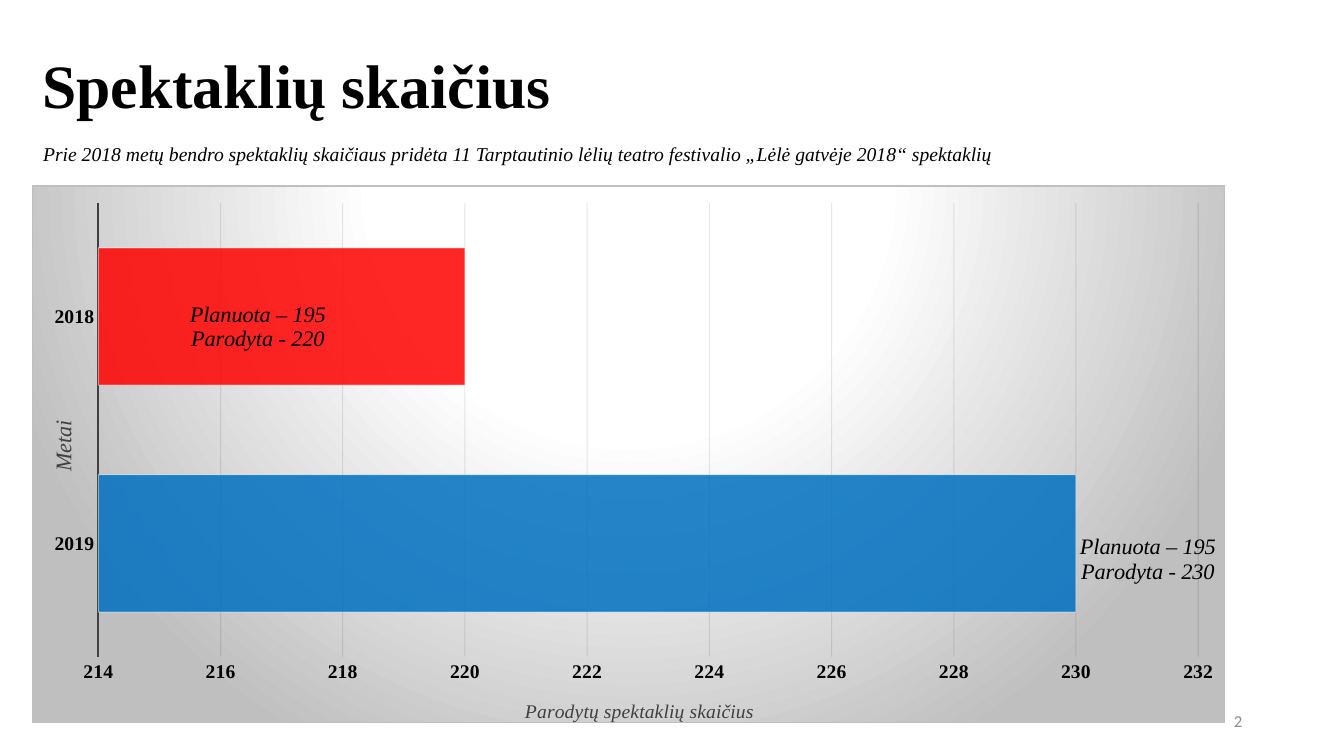
import pptx
import pptx.util
import pptx.chart.data
import pptx.dml.color
import pptx.enum.chart
import pptx.enum.text
import pptx.oxml
import pptx.oxml.ns

Inches = pptx.util.Inches
Pt = pptx.util.Pt
RGBColor = pptx.dml.color.RGBColor
Align = pptx.enum.text.PP_ALIGN
Label = pptx.enum.chart.XL_LABEL_POSITION
Tick = pptx.enum.chart.XL_TICK_MARK
qn = pptx.oxml.ns.qn

BLACK = RGBColor(0, 0, 0)
WHITE = RGBColor(255, 255, 255)
DARK = RGBColor(0x40, 0x40, 0x40)
GRID = RGBColor(0x0D, 0x0D, 0x0D)
GRAY = RGBColor(0x8C, 0x8C, 0x8C)
BLUE = RGBColor(0, 0x70, 0xC0)
RED = RGBColor(255, 0, 0)
SERIF = "Times New Roman"


def style(font, size, color, name=SERIF, bold=False, italic=False):
    font.size = Pt(size)
    font.color.rgb = color
    font.name = name
    font.bold = bold
    font.italic = italic


def place(node, spot, modes, **dims):
    for old in node.findall(qn("c:layout")):
        node.remove(old)
    parts = [f'<c:{tag} val="{val}"/>' for tag, val in [*modes, *dims.items()]]
    node.insert(spot, pptx.oxml.parse_xml(
        f'<c:layout {pptx.oxml.ns.nsdecls("c")}><c:manualLayout>'
        f'{"".join(parts)}</c:manualLayout></c:layout>'))


deck = pptx.Presentation()
deck.slide_width = Inches(13.33)
deck.slide_height = Inches(7.5)
slide = deck.slides.add_slide(deck.slide_layouts[5])

title = slide.shapes.title
title.left, title.top = Inches(0.32), Inches(0.15)
title.width, title.height = Inches(12.7), Inches(1.45)
title.text_frame.text = "Spektaklių skaičius"
title.text_frame.vertical_anchor = pptx.enum.text.MSO_ANCHOR.MIDDLE
head = title.text_frame.paragraphs[0]
head.alignment = Align.LEFT
head.line_spacing = 0.9
style(head.font, 44, BLACK, bold=True)

data = pptx.chart.data.CategoryChartData()
data.categories = ["2019", "2018"]
data.add_series("Series 1", [230, 220])
chart = slide.shapes.add_chart(
    pptx.enum.chart.XL_CHART_TYPE.BAR_CLUSTERED,
    Inches(0.32), Inches(1.84), Inches(11.83), Inches(5.39), data).chart
chart.has_title = False
chart.has_legend = False
style(chart.font, 10, BLACK, "Calibri")

space = chart._chartSpace
space.chart.addnext(pptx.oxml.parse_xml(
    f'<c:spPr {pptx.oxml.ns.nsdecls("c", "a")}><a:gradFill><a:gsLst>'
    '<a:gs pos="0"><a:srgbClr val="FFFFFF"/></a:gs>'
    '<a:gs pos="39000"><a:srgbClr val="FFFFFF"/></a:gs>'
    '<a:gs pos="100000"><a:srgbClr val="BFBFBF"/></a:gs></a:gsLst>'
    '<a:path path="circle">'
    '<a:fillToRect l="50000" t="-80000" r="50000" b="180000"/></a:path></a:gradFill>'
    '<a:ln w="9525"><a:solidFill><a:srgbClr val="BFBFBF"/></a:solidFill></a:ln>'
    '</c:spPr>'))

edge = [("xMode", "edge"), ("yMode", "edge")]
place(space.chart.plotArea, 0, [("layoutTarget", "inner"), *edge],
      x=0.055, y=0.032, w=0.923, h=0.846)

years, shows = chart.category_axis, chart.value_axis
for axis, name, size, x, y in [
    (years, "Metai", 16, 0.01, 0.43),
    (shows, "Parodytų spektaklių skaičius", 14, 0.41, 0.95),
]:
    axis.major_tick_mark = axis.minor_tick_mark = Tick.NONE
    style(axis.tick_labels.font, 14, BLACK, bold=True)
    frame = axis.axis_title.text_frame
    frame.text = name
    style(frame.paragraphs[0].font, size, DARK, italic=True)
    place(axis.axis_title._element, 1, edge, x=x, y=y)
years.axis_title.text_frame._txBody.bodyPr.set("rot", "-5400000")
years.format.line.color.rgb = DARK
years.format.line.width = Pt(1.5)
years.has_major_gridlines = False
shows.format.line.fill.background()
shows.minimum_scale = 214
shows.maximum_scale = 232
shows.major_unit = 2
shows.major_gridlines.format.line.color.rgb = GRID
shows.major_gridlines.format.line.width = Pt(0.75)

plot = chart.plots[0]
plot.gap_width = 65
plot.vary_by_categories = False
bars = plot.series[0]
for spot, color in enumerate([BLUE, RED]):
    form = bars.points[spot].format
    form.fill.solid()
    form.fill.fore_color.rgb = color
    form.line.color.rgb = WHITE
    form.line.width = Pt(0.75)

lines = shows._element.find(qn("c:majorGridlines"))
for node, alpha in [(lines, 10), (bars._element, 85)]:
    for tint in node.iter(qn("a:srgbClr")):
        if tint.get("val") == "FFFFFF":
            alpha_now = 50
        else:
            alpha_now = alpha
        tint.append(pptx.oxml.parse_xml(
            f'<a:alpha {pptx.oxml.ns.nsdecls("a")} val="{alpha_now * 1000}"/>'))

for spot, count, where, x, y in [
    (0, 230, Label.OUTSIDE_END, 0, 0.03),
    (1, 220, Label.CENTER, -0.02, 0.02),
]:
    label = bars.points[spot].data_label
    label.text_frame.text = f"Planuota – 195\nParodyta - {count}"
    label.text_frame.word_wrap = False
    for para in label.text_frame.paragraphs:
        style(para.runs[0].font, 16, BLACK, italic=True)
    label.position = where
    place(label._get_or_add_dLbl(), 1, [], x=x, y=y)

for text, left, top, width, align, size, color, name, italic in [
    ("Prie 2018 metų bendro spektaklių skaičiaus pridėta 11 Tarptautinio lėlių "
     "teatro festivalio „Lėlė gatvėje 2018“ spektaklių",
     0.08, 1.32, 10.12, Align.CENTER, 14, BLACK, SERIF, True),
    ("2", 9.42, 6.95, 3, Align.RIGHT, 12, GRAY, "Calibri", False),
]:
    frame = slide.shapes.add_textbox(
        Inches(left), Inches(top), Inches(width), Inches(0.4)).text_frame
    frame.word_wrap = True
    frame.vertical_anchor = pptx.enum.text.MSO_ANCHOR.MIDDLE
    frame.text = text
    para = frame.paragraphs[0]
    para.alignment = align
    style(para.font, size, color, name, italic=italic)

deck.save("out.pptx")
